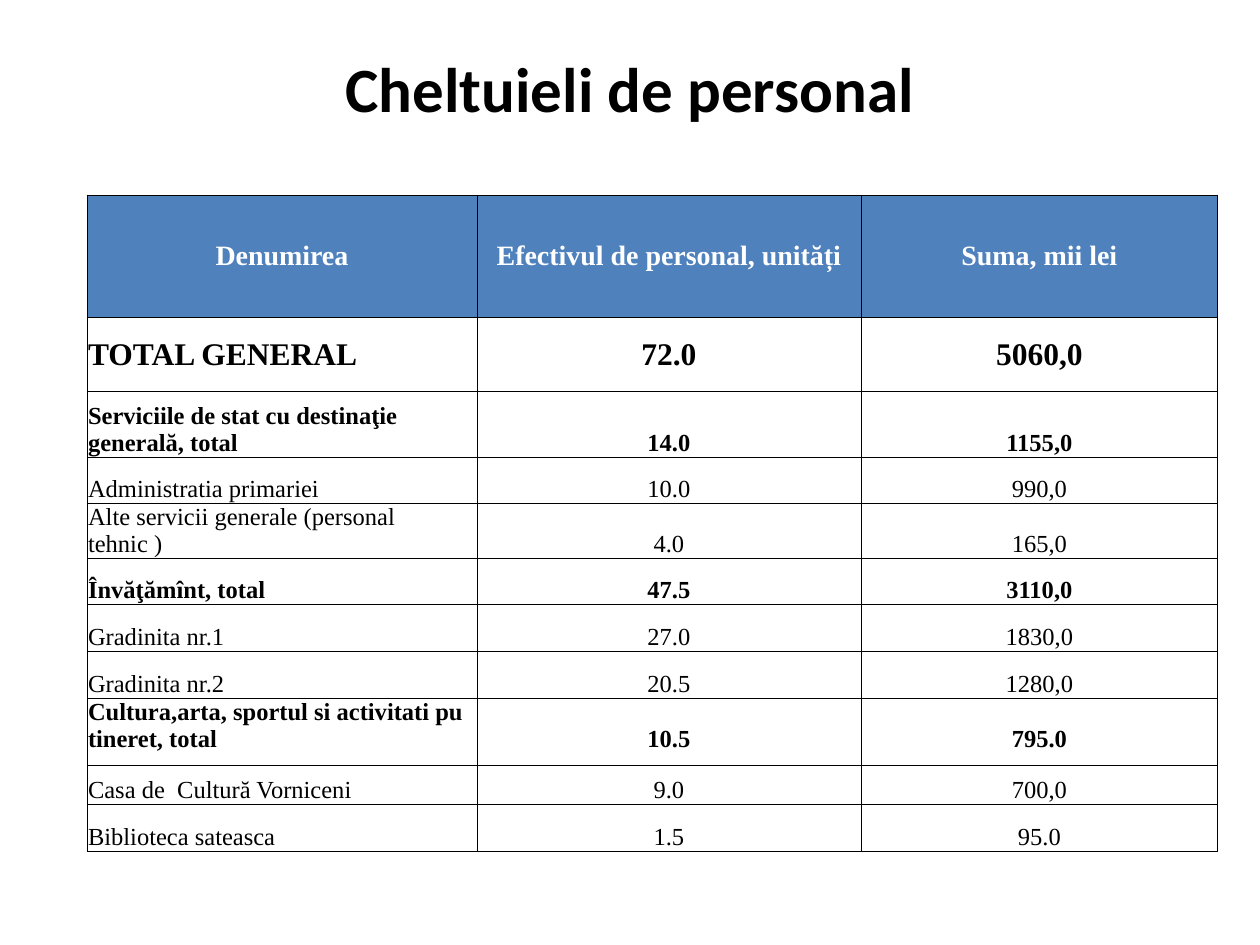
from lxml.etree import SubElement as Sub
from pptx import Presentation
from pptx.dml.color import RGBColor as Rgb
from pptx.enum.text import MSO_ANCHOR as Anchor, PP_ALIGN as Align
from pptx.oxml.ns import qn
from pptx.util import Pt

SCALE = 914400 / 126
SERIF = "Times New Roman"
COLS = [390, 384, 357]
HEAD = ["Denumirea", "Efectivul de personal, unități", "Suma, mii lei"]
ROWS = [
    (122, "head", HEAD),
    (74, "grand", ["TOTAL GENERAL", "72.0", "5060,0"]),
    (66, "sum", ["Serviciile de stat cu destinaţie generală, total", "14.0", "1155,0"]),
    (46, "item", ["Administratia primariei", "10.0", "990,0"]),
    (55, "item", ["Alte servicii generale (personal tehnic )", "4.0", "165,0"]),
    (46, "sum", ["Învăţămînt, total", "47.5", "3110,0"]),
    (47, "item", ["Gradinita nr.1", "27.0", "1830,0"]),
    (47, "item", ["Gradinita nr.2", "20.5", "1280,0"]),
    (67, "top", ["Cultura,arta, sportul si activitati pu tineret, total", "10.5", "795.0"]),
    (39, "item", ["Casa de  Cultură Vorniceni", "9.0", "700,0"]),
    (47, "item", ["Biblioteca sateasca", "1.5", "95.0"]),
]
STYLES = {
    "head": dict(size=16, bold=True, color="FFFFFF", anchor=Anchor.MIDDLE),
    "grand": dict(size=18, bold=True, anchor=Anchor.MIDDLE),
    "sum": dict(bold=True),
    "item": dict(),
    "top": dict(bold=True, anchor=Anchor.TOP),
}


def px(num):
    """Turn pixels into EMU."""
    return round(num * SCALE)


def tint(code):
    """Turn a hex string into a colour."""
    return Rgb.from_string(code)


def write(frame, text, font=SERIF, size=14, bold=False, color="000000",
          align=Align.CENTER, anchor=Anchor.BOTTOM, line=None):
    """Put formatted text into a text frame or table cell."""
    frame.vertical_anchor = anchor
    body = getattr(frame, "text_frame", frame)
    body.word_wrap = True
    par = body.paragraphs[0]
    par.alignment = align
    par.line_spacing = line
    run = par.add_run()
    run.text = text
    run.font.name = font
    run.font.size = Pt(size)
    run.font.bold = bold
    run.font.color.rgb = tint(color)


def border(cell, color="000000", width=0.5):
    """Draw a thin line on all four sides of a cell."""
    props = cell._tc.get_or_add_tcPr()
    for side in ("lnL", "lnR", "lnT", "lnB"):
        edge = Sub(props, qn("a:" + side), w=str(Pt(width)))
        fill = Sub(edge, qn("a:solidFill"))
        Sub(fill, qn("a:srgbClr"), val=color)


def heading(slide, left, top, width, height):
    """Place the slide title."""
    title = slide.shapes.title
    title.left, title.top = px(left), px(top)
    title.width, title.height = px(width), px(height)
    write(title.text_frame, "Cheltuieli de personal", font="Calibri", size=36,
          bold=True, anchor=Anchor.MIDDLE, line=0.9)


def costs(slide, left, top, width, height):
    """Place the table of staff costs."""
    frame = slide.shapes.add_table(len(ROWS), len(COLS), px(left), px(top),
                                   px(width), px(height))
    table = frame.table
    table.first_row = table.horz_banding = False
    for col, wide in zip(table.columns, COLS):
        col.width = px(wide)
    for row, (tall, kind, texts) in zip(table.rows, ROWS):
        row.height = px(tall)
        for pos, (cell, text) in enumerate(zip(row.cells, texts)):
            drop = 28 if kind == "top" and pos else 1
            cell.margin_left = cell.margin_right = px(1)
            cell.margin_top, cell.margin_bottom = px(drop), 0
            border(cell)
            if kind == "head":
                cell.fill.solid()
                cell.fill.fore_color.rgb = tint("4F81BD")
            else:
                cell.fill.background()
            side = Align.CENTER if pos or kind == "head" else Align.LEFT
            write(cell, text, align=side, **STYLES[kind])


def main():
    """Build and save the slide."""
    deck = Presentation()
    deck.slide_width, deck.slide_height = px(1260), px(945)
    slide = deck.slides.add_slide(deck.slide_layouts[5])
    heading(slide, 87, 50, 1086, 84)
    costs(slide, 87, 195, sum(COLS), sum(row[0] for row in ROWS))
    deck.save("out.pptx")


if __name__ == "__main__":
    main()
